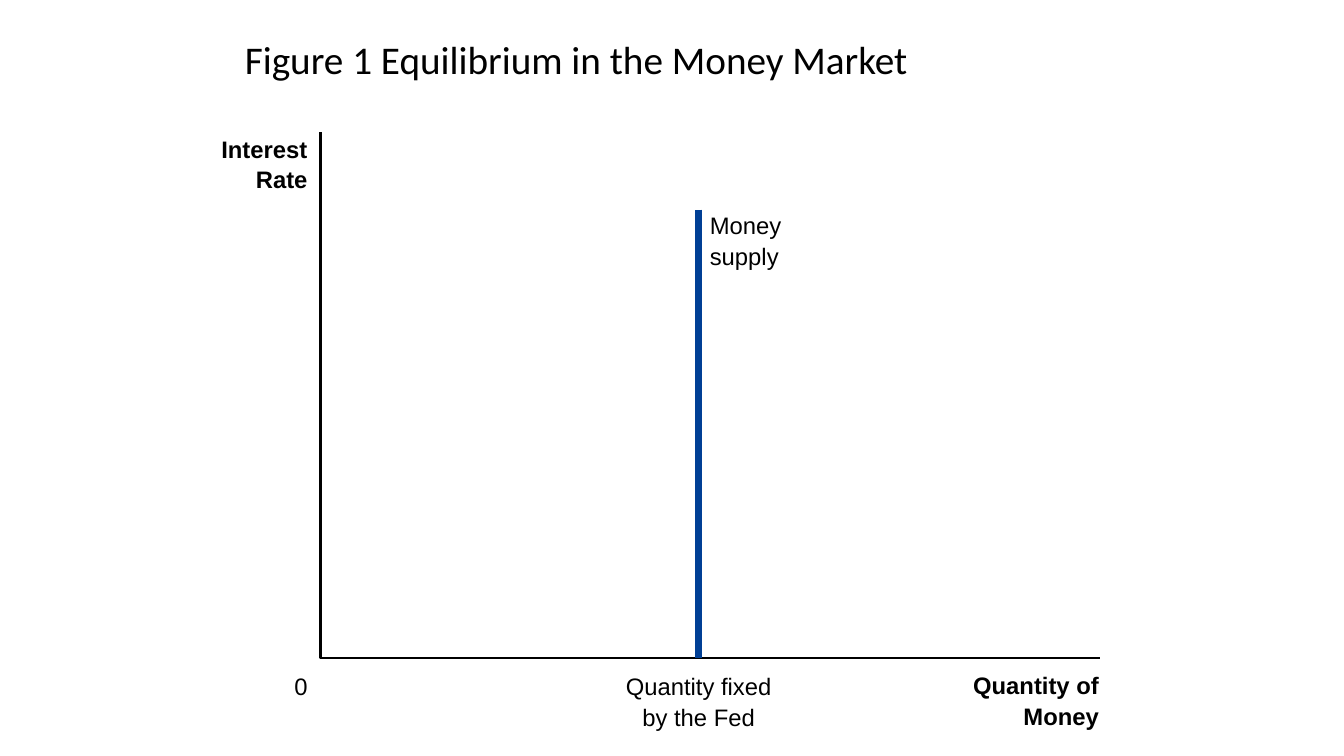
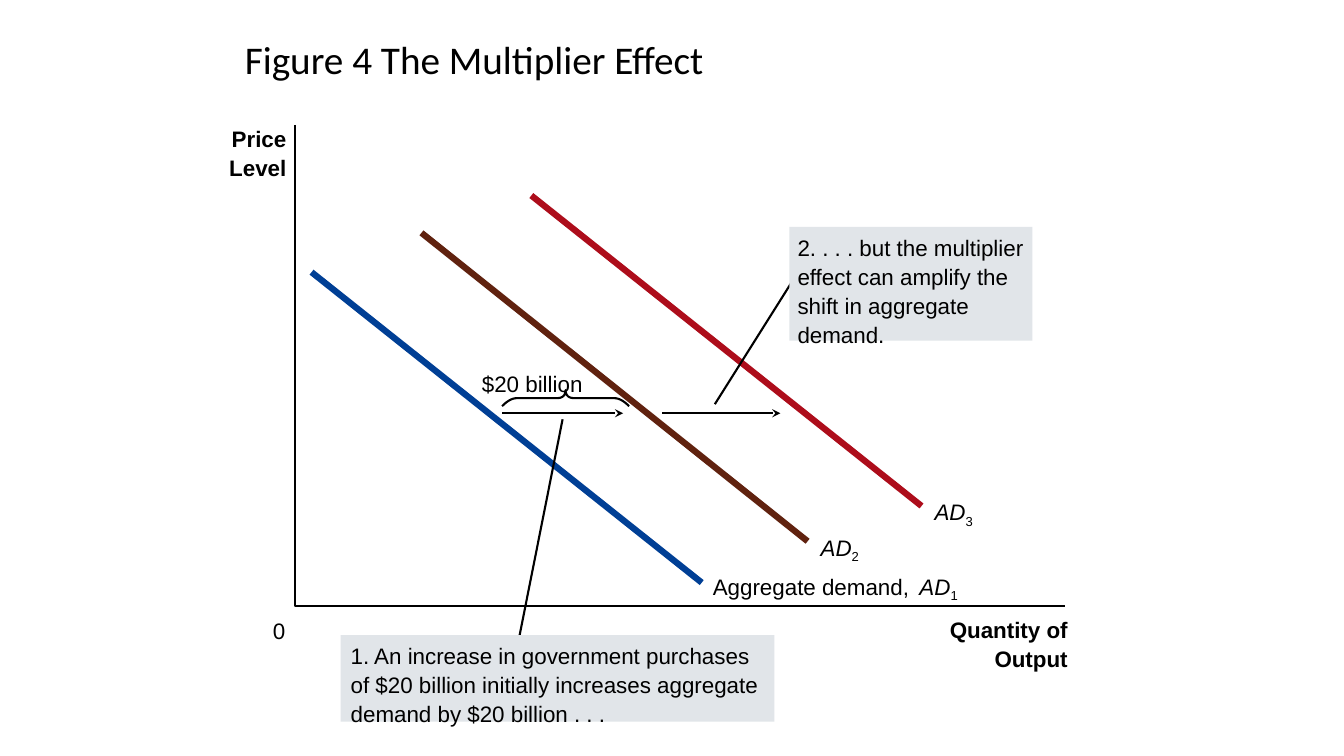
from dataclasses import dataclass

from lxml.etree import SubElement
from pptx import Presentation
from pptx.dml.color import RGBColor
from pptx.enum.shapes import MSO_CONNECTOR, MSO_SHAPE
from pptx.enum.text import MSO_ANCHOR, PP_ALIGN
from pptx.oxml.ns import qn
from pptx.util import Emu, Pt

# Shared measures and styles
EMU_PER_PX = 9144  # 100 px to the inch
SLIDE_WIDTH, SLIDE_HEIGHT = 1333, 750
BLACK, BLUE, BROWN, RED, PALE_GREY = "000000", "003F95", "60220F", "AD0D1B", "E1E5E9"
TITLE_FONT, BODY_FONT = "Calibri", "Arial"
LINE_SPACING = 1.08
LEFT, CENTER, RIGHT = PP_ALIGN.LEFT, PP_ALIGN.CENTER, PP_ALIGN.RIGHT
ALIGN_SHIFT = {LEFT: 0, CENTER: 0.5, RIGHT: 1}

Point = tuple[int, int]


@dataclass(frozen=True)
class Label:
    text: str
    x: int  # left edge, centre or right edge, following align
    top: int
    width: int
    align: PP_ALIGN = LEFT
    bold: bool = False
    italic: bool = False
    subscript: str = ""


@dataclass(frozen=True)
class Segment:
    start: Point
    end: Point
    color: str = BLACK
    weight: float = 1.5
    arrow: bool = False


@dataclass(frozen=True)
class Callout:
    text: str
    left: int
    top: int
    width: int
    height: int
    inset: Point  # left, right
    leader: Segment


def px(length: float) -> Emu:
    return Emu(round(length * EMU_PER_PX))


def rgb(color: str) -> RGBColor:
    return RGBColor.from_string(color)


def style_font(font, size: int, name: str = BODY_FONT) -> None:
    font.size = Pt(size)
    font.name = name
    font.color.rgb = rgb(BLACK)


def set_margins(text_frame, left: int = 0, top: int = 0, right: int = 0) -> None:
    text_frame.margin_left, text_frame.margin_right = px(left), px(right)
    text_frame.margin_top, text_frame.margin_bottom = px(top), 0


def draw_title(slide, text: str) -> None:
    shape = slide.shapes.add_textbox(px(233), px(25), px(900), px(75))
    text_frame = shape.text_frame
    text_frame.word_wrap = True
    text_frame.vertical_anchor = MSO_ANCHOR.MIDDLE
    text_frame.text = text
    paragraph = text_frame.paragraphs[0]
    paragraph.line_spacing = 0.8
    style_font(paragraph.runs[0].font, 28, TITLE_FONT)


def draw_label(slide, label: Label, size: int) -> None:
    left = label.x - label.width * ALIGN_SHIFT[label.align]
    height = 28 * len(label.text.splitlines())
    shape = slide.shapes.add_textbox(px(left), px(label.top), px(label.width), px(height))
    text_frame = shape.text_frame
    text_frame.word_wrap = True
    set_margins(text_frame)
    text_frame.text = label.text
    for paragraph in text_frame.paragraphs:
        paragraph.alignment = label.align
        paragraph.line_spacing = LINE_SPACING
        for run in paragraph.runs:
            style_font(run.font, size)
            run.font.bold = label.bold
            run.font.italic = label.italic
    if label.subscript:
        run = text_frame.paragraphs[-1].add_run()
        run.text = label.subscript
        style_font(run.font, size)
        run._r.get_or_add_rPr().set("baseline", "-25000")


def draw_segment(slide, segment: Segment) -> None:
    ends = [px(value) for value in segment.start + segment.end]
    connector = slide.shapes.add_connector(MSO_CONNECTOR.STRAIGHT, *ends)
    connector.line.color.rgb = rgb(segment.color)
    connector.line.width = Pt(segment.weight)
    properties = connector._element.spPr
    if segment.arrow:
        SubElement(properties.find(qn("a:ln")), qn("a:tailEnd"), type="stealth")
    SubElement(properties, qn("a:effectLst"))


def draw_outline(slide, points: list[tuple[float, float]], weight: float) -> None:
    first, *others = [(px(x), px(y)) for x, y in points]
    builder = slide.shapes.build_freeform(*first)
    builder.add_line_segments(others, close=False)
    shape = builder.convert_to_shape()
    shape.shadow.inherit = False
    shape.fill.background()
    shape.line.color.rgb = rgb(BLACK)
    shape.line.width = Pt(weight)


def bezier(controls: list[Point], steps: int = 8) -> list[tuple[float, float]]:
    weights = [
        ((1 - t) ** 3, 3 * t * (1 - t) ** 2, 3 * t * t * (1 - t), t**3)
        for t in (step / steps for step in range(steps + 1))
    ]
    return [
        tuple(sum(w * point[axis] for w, point in zip(row, controls)) for axis in (0, 1))
        for row in weights
    ]


def draw_brace(slide, center: int, top: int) -> None:
    outer = bezier([(63, 16), (59, 12), (54, 8), (48, 8)])
    inner = bezier([(8, 8), (4, 8), (0, 6), (0, 0)])
    half = outer + inner
    mirrored = [(-x, y) for x, y in reversed(half[:-1])]
    draw_outline(slide, [(center + x, top + y) for x, y in half + mirrored], 1.5)


def draw_callout(slide, callout: Callout, size: int) -> None:
    draw_segment(slide, callout.leader)
    shape = slide.shapes.add_shape(
        MSO_SHAPE.RECTANGLE,
        px(callout.left), px(callout.top), px(callout.width), px(callout.height),
    )
    shape.shadow.inherit = False
    shape.fill.solid()
    shape.fill.fore_color.rgb = rgb(PALE_GREY)
    shape.line.fill.background()
    text_frame = shape.text_frame
    text_frame.word_wrap = True
    text_frame.vertical_anchor = MSO_ANCHOR.TOP
    set_margins(text_frame, callout.inset[0], 5, callout.inset[1])
    text_frame.text = callout.text
    paragraph = text_frame.paragraphs[0]
    paragraph.alignment = LEFT
    paragraph.line_spacing = LINE_SPACING
    style_font(paragraph.runs[0].font, size)


def build_money_market(slide) -> None:
    size = 17
    draw_title(slide, "Figure 1 Equilibrium in the Money Market")
    draw_outline(slide, [(318, 131), (318, 653), (1091, 653)], 1.63)
    draw_segment(slide, Segment((693, 208), (693, 653), BLUE, 4.88))
    for label in (
        Label("Quantity of\nMoney", 1090, 663, 160, RIGHT, bold=True),
        Label("Interest\nRate", 305, 131, 120, RIGHT, bold=True),
        Label("0", 305, 664, 30, RIGHT),
        Label("Quantity fixed\nby the Fed", 693, 664, 180, CENTER),
        Label("Money\nsupply", 704, 207, 100),
    ):
        draw_label(slide, label, size)


def build_multiplier_effect(slide) -> None:
    size = 16
    draw_title(slide, "Figure 4 The Multiplier Effect")
    draw_outline(slide, [(293, 124), (293, 601), (1056, 601)], 1.5)

    # Shift arrows, demand curves and the brace over the first shift
    for segment in (
        Segment((498, 410), (618, 410), weight=1.38, arrow=True),
        Segment((657, 410), (774, 410), weight=1.38, arrow=True),
        Segment((309, 270), (696, 578), BLUE, 4.5),
        Segment((418, 231), (801, 537), BROWN, 4.5),
        Segment((527, 194), (914, 502), RED, 4.5),
    ):
        draw_segment(slide, segment)
    draw_brace(slide, 561, 387)

    # Axis and curve labels
    for label in (
        Label("Quantity of\nOutput", 1059, 609, 160, RIGHT, bold=True),
        Label("Price\nLevel", 284, 122, 100, RIGHT, bold=True),
        Label("0", 283, 610, 30, RIGHT),
        Label("Aggregate demand,", 707, 566, 203),
        Label("AD", 912, 566, 60, italic=True, subscript="1"),
        Label("AD", 814, 527, 60, italic=True, subscript="2"),
        Label("AD", 927, 492, 60, italic=True, subscript="3"),
        Label("$20 billion", 478, 365, 120),
    ):
        draw_label(slide, label, size)

    # Callouts
    for callout in (
        Callout(
            "1. An increase in government purchases of $20 billion initially "
            "increases aggregate demand by $20 billion . . .",
            338, 630, 430, 86, (10, 8), Segment((558, 416), (515, 632)),
        ),
        Callout(
            "2. . . . but the multiplier effect can amplify the shift in aggregate demand.",
            783, 225, 241, 113, (8, 3), Segment((789, 274), (709, 401)),
        ),
    ):
        draw_callout(slide, callout, size)


def main() -> None:
    presentation = Presentation()
    presentation.slide_width = px(SLIDE_WIDTH)
    presentation.slide_height = px(SLIDE_HEIGHT)
    blank_layout = presentation.slide_layouts[6]
    for build in (build_money_market, build_multiplier_effect):
        build(presentation.slides.add_slide(blank_layout))
    presentation.save("out.pptx")


if __name__ == "__main__":
    main()
